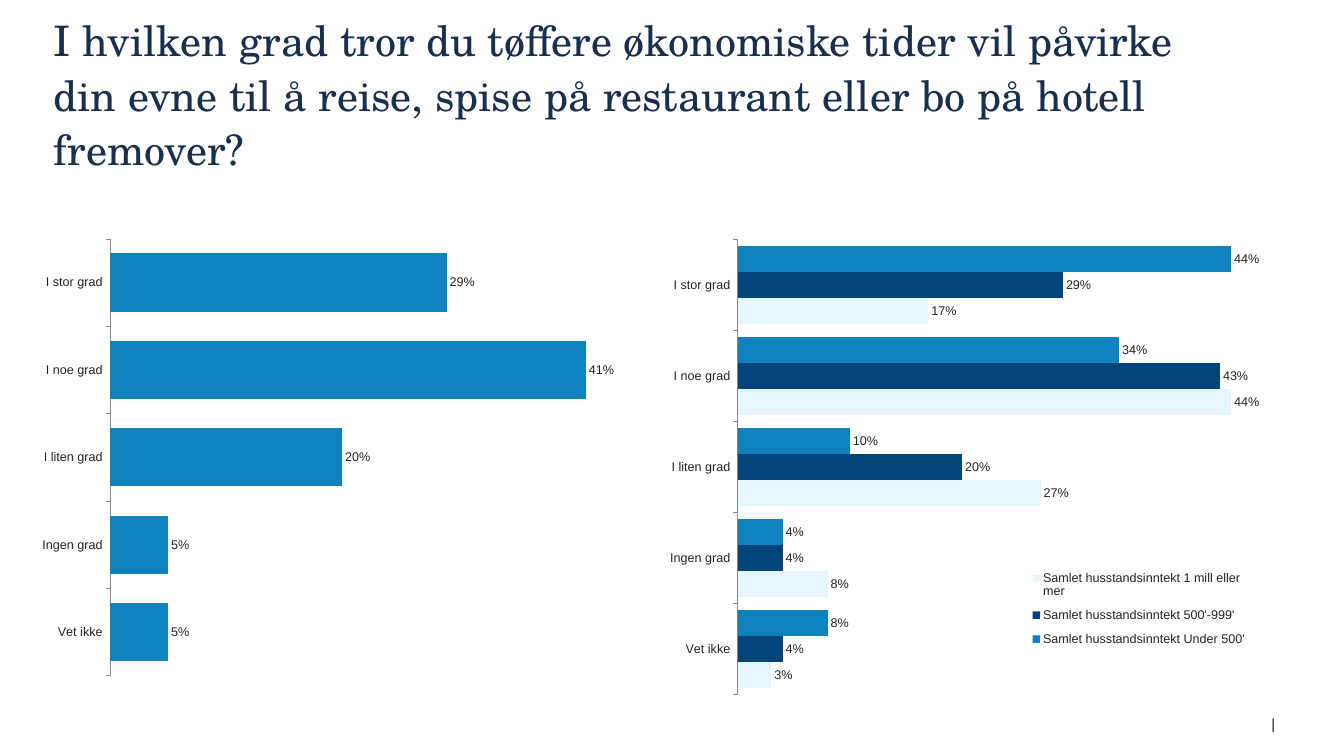
import pptx
import pptx.util
import pptx.chart.data
import pptx.dml.color
import pptx.enum.chart
import pptx.enum.text
import pptx.oxml
import pptx.oxml.ns

Inches = pptx.util.Inches
RGBColor = pptx.dml.color.RGBColor
NAVY = RGBColor(0x18, 0x2F, 0x4E)
INK = RGBColor(0x22, 0x22, 0x22)
GREY = RGBColor(0x88, 0x88, 0x88)
BLUE = RGBColor(0x0F, 0x81, 0xBC)
DEEP = RGBColor(0x00, 0x44, 0x79)
PALE = RGBColor(0xE7, 0xF6, 0xFC)
ALIGN = pptx.enum.text.PP_ALIGN
ANCHOR = pptx.enum.text.MSO_ANCHOR
GRADES = ["I stor grad", "I noe grad", "I liten grad", "Ingen grad", "Vet ikke"]
TOTAL = [("Series 1", [0.29, 0.41, 0.2, 0.05, 0.05], BLUE)]
INCOME = [
    ("Samlet husstandsinntekt Under 500'", [0.44, 0.34, 0.1, 0.04, 0.08], BLUE),
    ("Samlet husstandsinntekt 500'-999'", [0.29, 0.43, 0.2, 0.04, 0.04], DEEP),
    ("Samlet husstandsinntekt 1 mill eller mer", [0.17, 0.44, 0.27, 0.08, 0.03], PALE),
]


def add_text(slide, text, box, size, font, color, align=ALIGN.LEFT,
             anchor=ANCHOR.TOP, space=1.0):
    frame = slide.shapes.add_textbox(*map(Inches, box)).text_frame
    frame.word_wrap = True
    frame.vertical_anchor = anchor
    frame.margin_left = frame.margin_right = 0
    frame.margin_top = frame.margin_bottom = 0
    para = frame.paragraphs[0]
    para.alignment = align
    para.line_spacing = space
    run = para.add_run()
    run.text = text
    run.font.size = pptx.util.Pt(size)
    run.font.name = font
    run.font.color.rgb = color


def set_layout(parent, index, area, inner=False):
    for old in parent.findall(pptx.oxml.ns.qn("c:layout")):
        parent.remove(old)
    target = '<c:layoutTarget val="inner"/>' if inner else ""
    modes = "".join(f'<c:{key}Mode val="edge"/>' for key in "xy")
    sizes = "".join(f'<c:{key} val="{val}"/>' for key, val in zip("xywh", area))
    space = pptx.oxml.ns.nsdecls("c")
    parent.insert(index, pptx.oxml.parse_xml(
        f"<c:layout {space}><c:manualLayout>{target}{modes}{sizes}"
        "</c:manualLayout></c:layout>"))


def add_bars(slide, box, rows, top, area, legend=None):
    data = pptx.chart.data.CategoryChartData(number_format="0%")
    data.categories = GRADES
    for name, vals, _ in rows:
        data.add_series(name, vals)
    kind = pptx.enum.chart.XL_CHART_TYPE.BAR_CLUSTERED
    chart = slide.shapes.add_chart(kind, *map(Inches, box), data).chart
    chart.has_title = False
    chart.font.size = pptx.util.Pt(12)
    chart.font.name = "Arial"
    chart.font.color.rgb = INK

    cats = chart.category_axis
    cats.reverse_order = True
    cats.has_major_gridlines = False
    cats.major_tick_mark = pptx.enum.chart.XL_TICK_MARK.OUTSIDE
    cats.format.line.color.rgb = GREY
    scale = chart.value_axis
    scale.minimum_scale = 0
    scale.maximum_scale = top
    scale.has_major_gridlines = False
    scale.visible = False

    plot = chart.plots[0]
    plot.gap_width = 50
    plot.overlap = 0
    plot.vary_by_categories = False
    for bars, (_, _, color) in zip(plot.series, rows):
        bars.format.fill.solid()
        bars.format.fill.fore_color.rgb = color
        bars.invert_if_negative = False
        labels = bars.data_labels
        labels.show_value = True
        labels.number_format = "0%"
        labels.number_format_is_linked = False
        labels.position = pptx.enum.chart.XL_LABEL_POSITION.OUTSIDE_END
    root = chart.element
    set_layout(root.find(".//" + pptx.oxml.ns.qn("c:plotArea")), 0, area, True)

    chart.has_legend = legend is not None
    if legend:
        chart.legend.position = pptx.enum.chart.XL_LEGEND_POSITION.RIGHT
        chart.legend.include_in_layout = False
        set_layout(root.find(".//" + pptx.oxml.ns.qn("c:legend")), 1, legend)


def main():
    deck = pptx.Presentation()
    deck.slide_width = Inches(17.78)
    deck.slide_height = Inches(10)
    slide = deck.slides.add_slide(deck.slide_layouts[6])
    add_text(slide, "|", (16.08, 9.46, 0.79, 0.24), 14, "Arial", INK,
             align=ALIGN.RIGHT)
    add_text(slide, "I hvilken grad tror du tøffere økonomiske tider vil påvirke "
             "din evne til å reise, spise på restaurant eller bo på hotell fremover?",
             (0.71, 0.26, 15.65, 1.93), 40, "TeX Gyre Schola", NAVY,
             anchor=ANCHOR.MIDDLE, space=1.08)
    add_bars(slide, (0.4, 3.04, 8.13, 6.02), TOTAL, 0.45, (0.13, 0.02, 0.85, 0.96))
    add_bars(slide, (8.54, 3.04, 9.39, 6.34), INCOME, 0.5,
             (0.13, 0.02, 0.79, 0.95), legend=(0.54, 0.69, 0.31, 0.2))
    deck.save("out.pptx")


if __name__ == "__main__":
    main()
